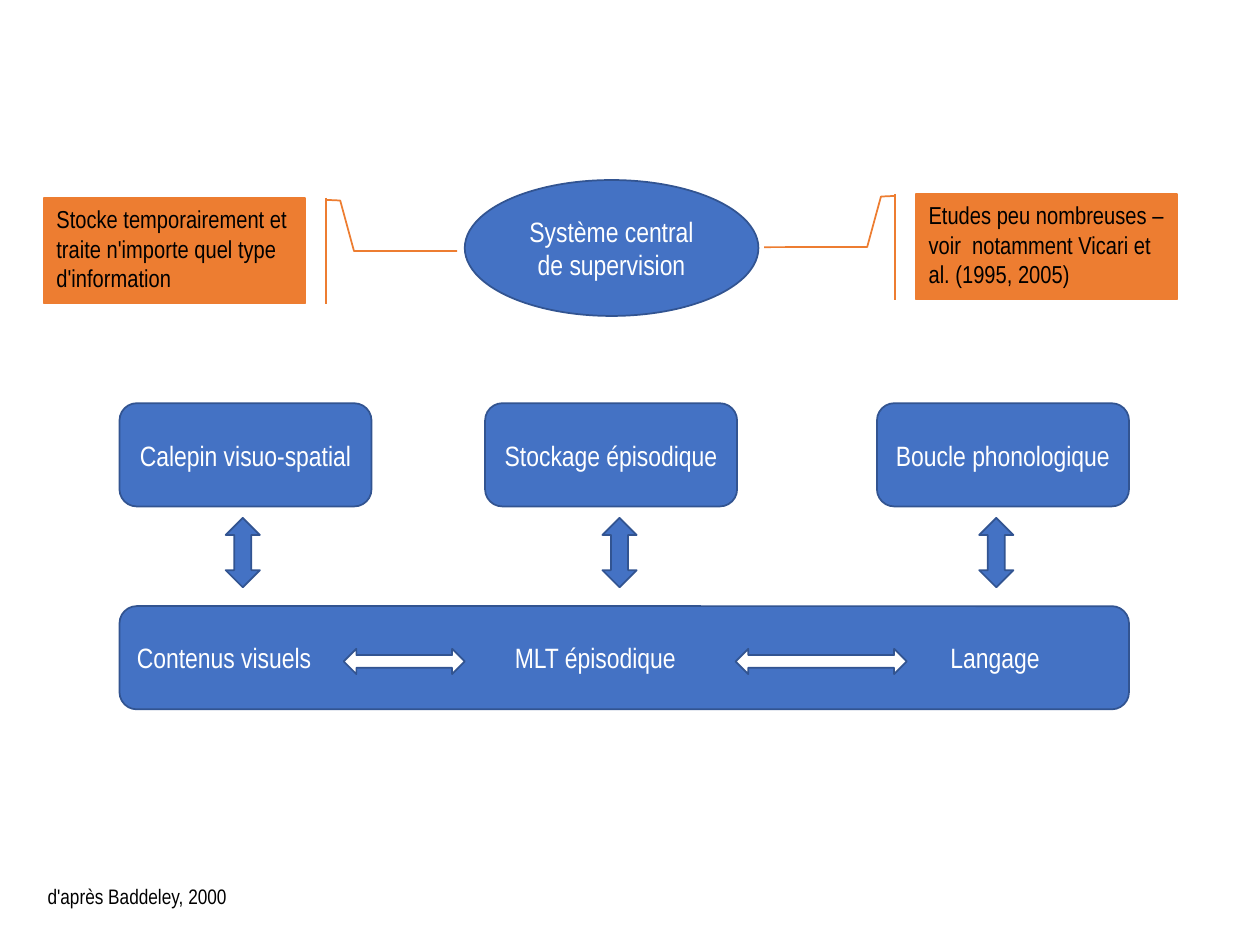
from lxml.etree import SubElement
from pptx import Presentation
from pptx.dml.color import RGBColor
from pptx.enum.shapes import MSO_SHAPE
from pptx.enum.text import MSO_ANCHOR, MSO_AUTO_SIZE, PP_ALIGN
from pptx.oxml.ns import qn
from pptx.util import Cm, Pt

COLORS = {"blue": "4472C4", "edge": "325491", "orange": "ED7D31",
          "white": "FFFFFF", "black": "000000"}
FONT = "Arial Narrow"
BEND = [0.019, -0.08, 0.025, -0.135, 0.503, -0.188, 0.504, -0.583]


def color(name):
    return RGBColor.from_string(COLORS[name])


def write(shape, text, size, tint, align=PP_ALIGN.LEFT, anchor=MSO_ANCHOR.MIDDLE):
    frame = shape.text_frame
    frame.vertical_anchor = anchor
    para = frame.paragraphs[0]
    para.text = text
    para.alignment = align
    para.font.name = FONT
    para.font.size = Pt(size)
    para.font.color.rgb = color(tint)
    return para


def draw(slide, kind, box, fill="blue", edge="edge"):
    shape = slide.shapes.add_shape(kind, *map(Cm, box))
    shape.shadow.inherit = False
    shape.fill.solid()
    shape.fill.fore_color.rgb = color(fill)
    shape.line.color.rgb = color(edge)
    shape.line.width = Pt(1)
    return shape


def label(slide, kind, box, text):
    write(draw(slide, kind, box), text, 16, "white", PP_ALIGN.CENTER)


def stores(slide, box):
    left, top, width, height = box
    for shift, text in [(0, "Calepin visuo-spatial"), (7.37, "Stockage épisodique"),
                        (width - 5.08, "Boucle phonologique")]:
        label(slide, MSO_SHAPE.ROUNDED_RECTANGLE,
              (left + shift, top, 5.08, height), text)


def links(slide, box):
    left, top, width, height = box
    thick = 0.69
    step = (width - thick) / 2
    for i in range(3):
        draw(slide, MSO_SHAPE.UP_DOWN_ARROW, (left + i * step, top, thick, height))


def memory(slide, box):
    left, top, width, height = box
    bar = draw(slide, MSO_SHAPE.ROUNDED_RECTANGLE, box)
    para = write(bar, "Contenus visuels\tMLT épisodique\tLangage", 16, "white")
    props = para._p.get_or_add_pPr()
    tabs = SubElement(props, qn("a:tabLst"))
    props.insert(0, tabs)
    for stop in (7.62, 16.4):
        SubElement(tabs, qn("a:tab"), pos=str(Cm(stop)), algn="l")
    for shift, span in [(4.52, 2.44), (12.42, 3.45)]:
        draw(slide, MSO_SHAPE.LEFT_RIGHT_ARROW,
             (left + shift, top + 0.86, span, 0.51), "white")


def callout(slide, box, text, flip=False):
    shape = draw(slide, MSO_SHAPE.LINE_CALLOUT_3_BORDER_AND_ACCENT_BAR,
                 box, "orange", "orange")
    for i, value in enumerate(BEND):
        shape.adjustments[i] = value
    if flip:
        shape._element.spPr.xfrm.set("flipH", "1")
    write(shape, text, 14, "black", anchor=MSO_ANCHOR.TOP)


def credit(slide, box, text):
    shape = slide.shapes.add_textbox(*map(Cm, box))
    shape.text_frame.word_wrap = False
    shape.text_frame.auto_size = MSO_AUTO_SIZE.SHAPE_TO_FIT_TEXT
    write(shape, text, 12, "black", anchor=MSO_ANCHOR.TOP)


def main():
    deck = Presentation()
    deck.slide_width, deck.slide_height = Cm(25.4), Cm(19.05)
    slide = deck.slides.add_slide(deck.slide_layouts[6])
    label(slide, MSO_SHAPE.OVAL, (9.37, 3.63, 5.92, 2.74),
          "Système central de supervision")
    stores(slide, (2.41, 8.13, 20.35, 2.08))
    memory(slide, (2.41, 12.22, 20.35, 2.08))
    links(slide, (4.55, 10.44, 15.88, 1.4))
    credit(slide, (0.71, 17.68, 4.17, 0.76), "d'après Baddeley, 2000")
    callout(slide, (18.47, 3.91, 5.26, 2.13),
            "Etudes peu nombreuses – voir  notamment Vicari et al. (1995, 2005)")
    callout(slide, (0.89, 3.99, 5.26, 2.13),
            "Stocke temporairement et traite n'importe quel type d'information", True)
    deck.save("out.pptx")


if __name__ == "__main__":
    main()
